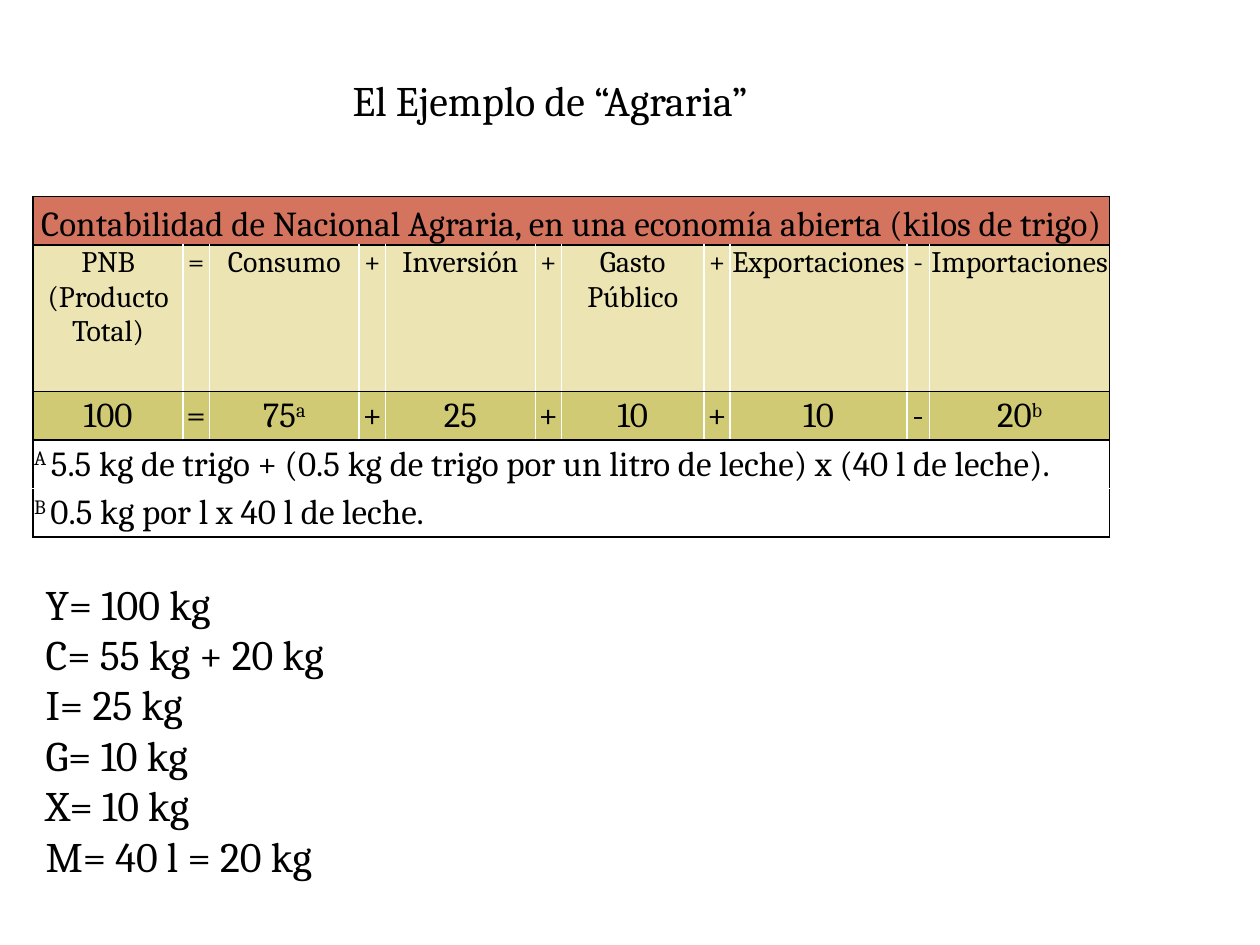
import pptx
import pptx.dml.color
import pptx.enum.text
import pptx.oxml
import pptx.oxml.ns
import pptx.util
from pptx.util import Cm

ALIGN = pptx.enum.text.PP_ALIGN
ANCHOR = pptx.enum.text.MSO_ANCHOR
BLACK, WHITE = "000000", "FFFFFF"


def rgb(value):
    return pptx.dml.color.RGBColor.from_string(value)


class Deck:
    font = "Cambria"

    def __init__(self, width, height):
        self.prs = pptx.Presentation()
        self.prs.slide_width, self.prs.slide_height = width, height
        self.s = self.prs.slides.add_slide(self.prs.slide_layouts[6])

    def run(self, p, text, size, raised=False):
        r = p.add_run()
        r.text = text
        r.font.name = self.font
        r.font.size = pptx.util.Pt(size)
        r.font.color.rgb = rgb(BLACK)
        if raised:
            r._r.get_or_add_rPr().set("baseline", "30000")

    def text(self, lines, left, top, width, height, size, wrap=True):
        sp = self.s.shapes.add_textbox(left, top, width, height)
        tf = sp.text_frame
        tf.word_wrap = wrap
        tf.auto_size = pptx.enum.text.MSO_AUTO_SIZE.SHAPE_TO_FIT_TEXT
        for i, line in enumerate(lines):
            p = tf.add_paragraph() if i else tf.paragraphs[0]
            self.run(p, line, size)

    def table(self, left, top, widths, heights):
        frame = self.s.shapes.add_table(len(heights), len(widths), left, top,
                                        sum(widths), sum(heights))
        table = frame.table
        table.first_row = table.horz_banding = False
        for column, width in zip(table.columns, widths):
            column.width = width
        for row, height in zip(table.rows, heights):
            row.height = height
        return table

    def cell(self, cell, runs, size, fill, anchor, align):
        """Fill one cell with runs given as (text, raised) pairs."""
        cell.margin_left = cell.margin_right = cell.margin_top = Cm(0.02)
        cell.margin_bottom = 0
        cell.vertical_anchor = anchor
        if fill:
            cell.fill.solid()
            cell.fill.fore_color.rgb = rgb(fill)
        else:
            cell.fill.background()
        p = cell.text_frame.paragraphs[0]
        p.alignment = align
        for text, raised in runs:
            self.run(p, text, size, raised)

    def borders(self, cell, left, right, top, bottom):
        tcPr = cell._tc.get_or_add_tcPr()
        sides = zip("LRTB", (left, right, top, bottom))
        for i, (side, color) in enumerate(sides):
            tcPr.insert(i, pptx.oxml.parse_xml(
                f'<a:ln{side} {pptx.oxml.ns.nsdecls("a")} w="12700"><a:solidFill>'
                f'<a:srgbClr val="{color}"/></a:solidFill></a:ln{side}>'))


def plain(*texts):
    return [[(text, False)] for text in texts]


def main():
    deck = Deck(Cm(25.4), Cm(19.05))
    deck.text(["El Ejemplo de “Agraria”"], Cm(6.86), Cm(1.37), Cm(9.37), Cm(1.28),
              24, wrap=False)

    heading = plain("Contabilidad de Nacional Agraria, en una economía abierta "
                    "(kilos de trigo)")
    names = plain("PNB (Producto Total)", "=", "Consumo", "+", "Inversión", "+",
                  "Gasto Público", "+", "Exportaciones", "-", "Importaciones")
    values = plain("100", "=", "75", "+", "25", "+", "10", "+", "10", "-", "20")
    values[2].append(("a", True))
    values[-1].append(("b", True))
    note_a = [[("A ", True), ("5.5 kg de trigo + (0.5 kg de trigo por un litro de "
                              "leche) x (40 l de leche).", False)]]
    note_b = [[("B ", True), ("0.5 kg por l x 40 l de leche.", False)]]

    # cells, size, fill, anchor, alignment, top border, bottom border
    rows = [
        (heading, 20, "D4745E", ANCHOR.BOTTOM, ALIGN.CENTER, BLACK, BLACK),
        (names, 17, "ECE5B3", ANCHOR.TOP, ALIGN.CENTER, BLACK, BLACK),
        (values, 20, "D1CA75", ANCHOR.MIDDLE, ALIGN.CENTER, BLACK, BLACK),
        (note_a, 20, None, ANCHOR.MIDDLE, ALIGN.LEFT, BLACK, WHITE),
        (note_b, 20, None, ANCHOR.MIDDLE, ALIGN.LEFT, WHITE, BLACK),
    ]
    term, sign = Cm(3.02), Cm(0.53)
    widths = [term, sign, term, sign, term, sign, Cm(2.87), sign, Cm(3.56),
              Cm(0.46), Cm(3.63)]
    line = Cm(0.98)
    table = deck.table(Cm(0.67), Cm(3.96), widths, [line, Cm(2.95), line, line, line])
    last = len(widths) - 1
    for i, (cells, size, fill, anchor, align, top, bottom) in enumerate(rows):
        merged = len(cells) == 1
        if merged:
            table.cell(i, 0).merge(table.cell(i, last))
        for j, runs in enumerate(cells):
            deck.cell(table.cell(i, j), runs, size, fill, anchor, align)
        for j in range(last + 1):
            deck.borders(table.cell(i, j),
                         BLACK if merged or j == 0 else WHITE,
                         BLACK if merged or j == last else WHITE, top, bottom)

    deck.text(["Y= 100 kg", "C= 55 kg + 20 kg", "I= 25 kg", "G= 10 kg", "X= 10 kg",
               "M= 40 l = 20 kg"], Cm(0.67), Cm(11.53), Cm(10), Cm(6.4), 24)
    deck.prs.save("out.pptx")


if __name__ == "__main__":
    main()
